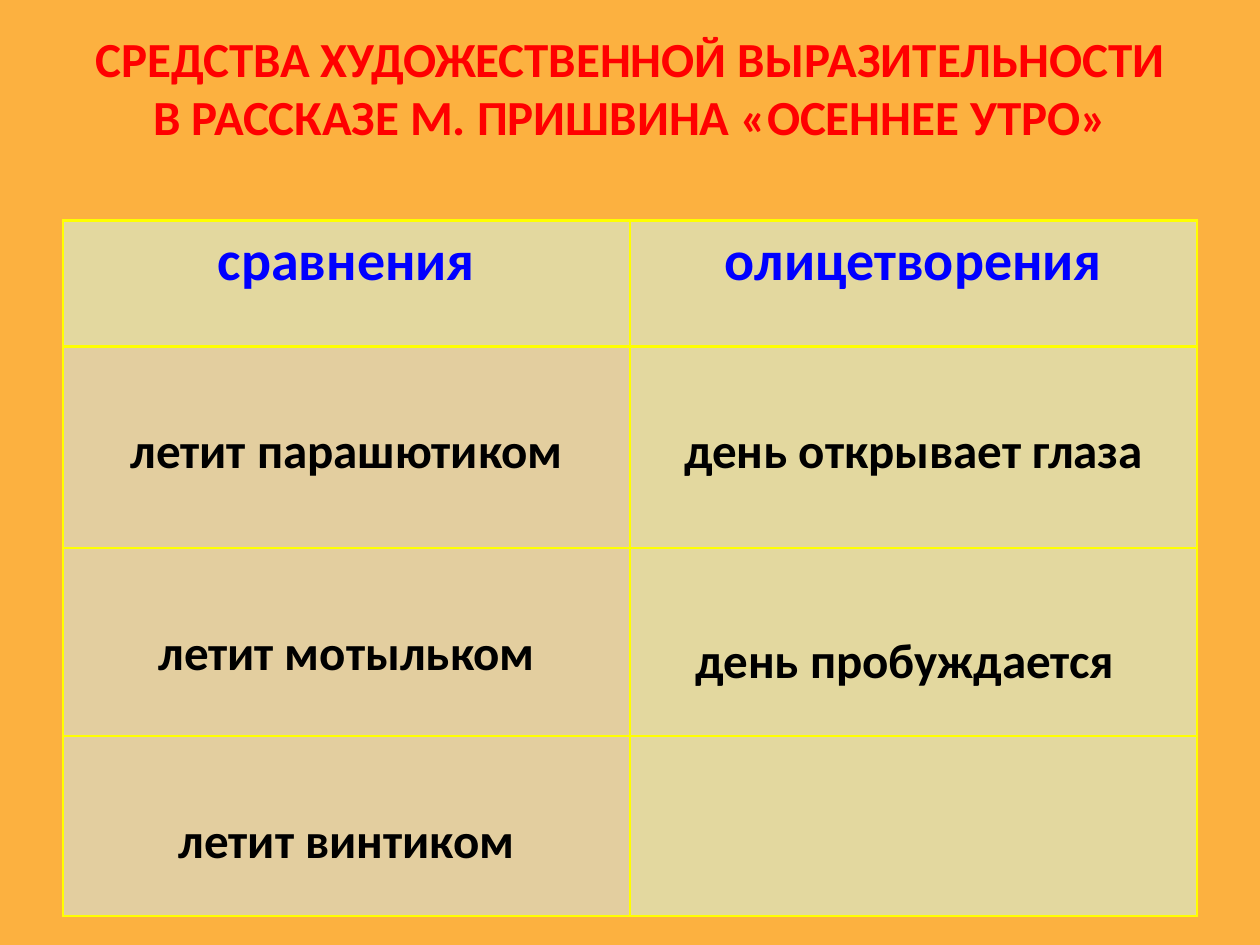
from lxml import etree
from pptx import Presentation
from pptx.dml.color import RGBColor
from pptx.enum.text import MSO_ANCHOR, PP_ALIGN
from pptx.oxml.ns import qn
from pptx.util import Inches, Pt

CENTER, MIDDLE = PP_ALIGN.CENTER, MSO_ANCHOR.MIDDLE
COLORS = {
    "background": "FCB140",
    "title": "FF0000",
    "heading": "0000FF",
    "example": "000000",
    "border": "FFFF00",
    "comparison": "CCECFF",
    "plain": "CCFFFF",
}
TITLE_ONLY = 5
MARGIN = 0.5
TITLE_TOP, TITLE_HEIGHT = 0.3, 1.25
TABLE_TOP = 1.75
ROW_HEIGHTS = [1, 1.6, 1.49, 1.43]
ROWS = [
    ("сравнения", "олицетворения"),
    ("летит парашютиком", "день открывает глаза"),
    ("летит мотыльком", ""),
    ("летит винтиком", ""),
]


def format_text(paragraph, size, color, align=None):
    paragraph.alignment = align
    for run in paragraph.runs:
        run.font.name = "Calibri"
        run.font.size = Pt(size)
        run.font.bold = True
        run.font.color.rgb = RGBColor.from_string(COLORS[color])


def style_cell(cell, color):
    """Give the cell a half-transparent fill and a border on all four sides."""
    cell.fill.solid()
    cell.fill.fore_color.rgb = RGBColor.from_string(COLORS[color])
    properties = cell._tc.get_or_add_tcPr()
    fill_color = properties.find(qn("a:solidFill")).find(qn("a:srgbClr"))
    etree.SubElement(fill_color, qn("a:alpha"), val="50000")
    for position, side in enumerate(("lnL", "lnR", "lnT", "lnB")):
        border = etree.Element(qn(f"a:{side}"), w=str(Pt(1.5)))
        border_fill = etree.SubElement(border, qn("a:solidFill"))
        etree.SubElement(border_fill, qn("a:srgbClr"), val=COLORS["border"])
        properties.insert(position, border)


prs = Presentation()
prs.slide_width, prs.slide_height = Inches(10), Inches(7.5)
content_width = prs.slide_width - 2 * Inches(MARGIN)
slide = prs.slides.add_slide(prs.slide_layouts[TITLE_ONLY])
slide.background.fill.solid()
slide.background.fill.fore_color.rgb = RGBColor.from_string(COLORS["background"])

title = slide.shapes.title
title.left, title.top = Inches(MARGIN), Inches(TITLE_TOP)
title.width, title.height = content_width, Inches(TITLE_HEIGHT)
heading = title.text_frame
heading.text = "СРЕДСТВА ХУДОЖЕСТВЕННОЙ ВЫРАЗИТЕЛЬНОСТИ\vВ РАССКАЗЕ М. ПРИШВИНА «ОСЕННЕЕ УТРО»"
heading.vertical_anchor = MIDDLE
heading.margin_bottom = Inches(0.52)
format_text(heading.paragraphs[0], 28, "title", CENTER)

devices = slide.shapes.add_table(
    len(ROWS), 2, Inches(MARGIN), Inches(TABLE_TOP),
    content_width, Inches(sum(ROW_HEIGHTS))).table
for row, (height, texts) in enumerate(zip(ROW_HEIGHTS, ROWS)):
    devices.rows[row].height = Inches(height)
    for column, text in enumerate(texts):
        cell = devices.cell(row, column)
        style_cell(cell, "comparison" if row and column == 0 else "plain")
        cell.margin_top = Inches(0.6 if row else 0.05)
        cell.text_frame.text = text
        size, color = (28, "example") if row else (32, "heading")
        format_text(cell.text_frame.paragraphs[0], size, color, CENTER)

awakening = slide.shapes.add_textbox(
    Inches(5.42), Inches(4.95), Inches(3.55), Inches(0.57)).text_frame
awakening.word_wrap = False
awakening.text = "день пробуждается"
format_text(awakening.paragraphs[0], 28, "example")

prs.save("out.pptx")
